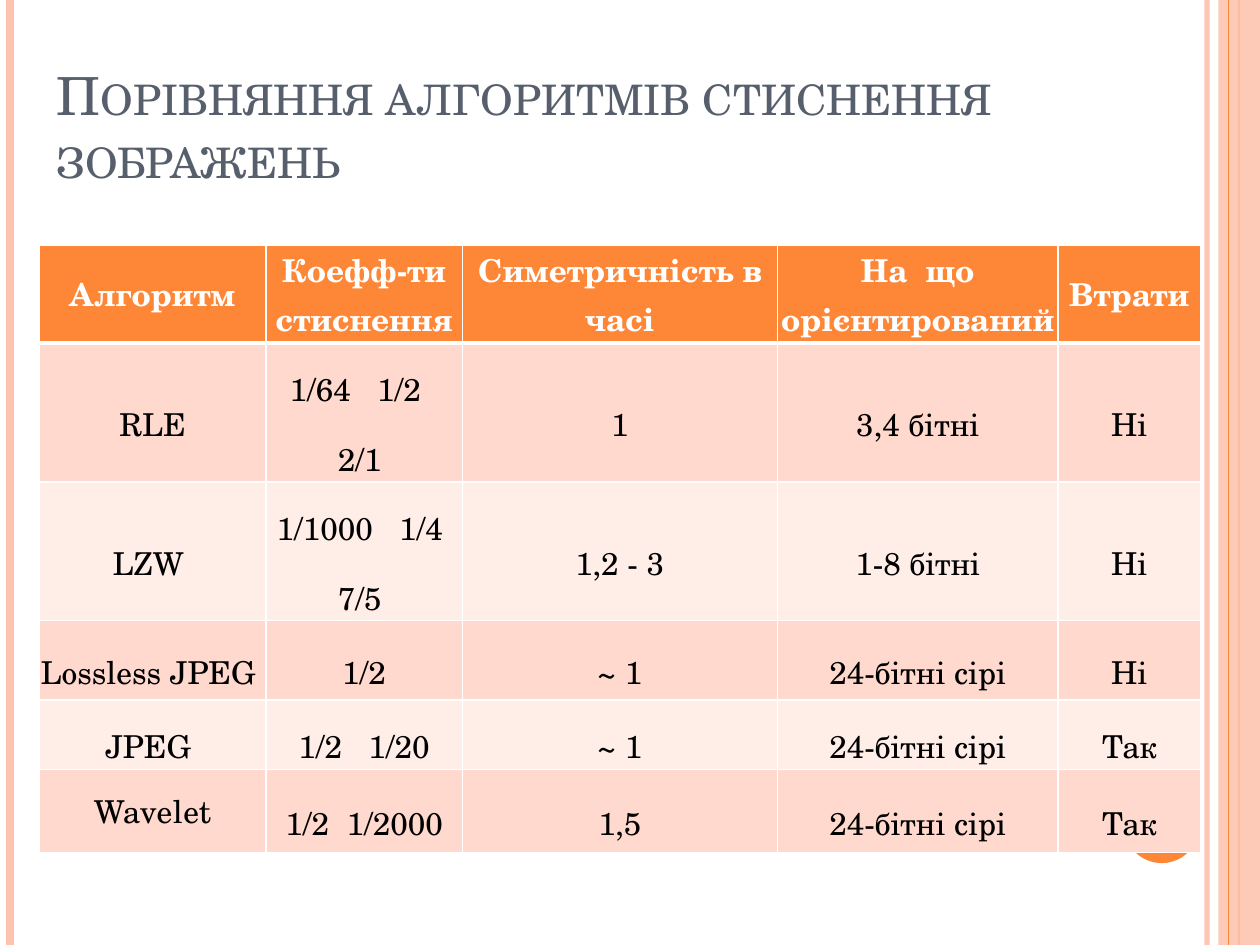
from dataclasses import dataclass

from lxml.etree import SubElement
from pptx import Presentation
from pptx.dml.color import RGBColor
from pptx.enum.shapes import MSO_CONNECTOR, MSO_SHAPE
from pptx.enum.text import MSO_ANCHOR, MSO_AUTO_SIZE, PP_ALIGN
from pptx.oxml.ns import qn
from pptx.util import Cm, Pt

FONT = "TeX Gyre Schola"
HUES = {
    "white": "FFFFFF", "black": "000000", "slate": "575F6D",
    "orange": "FE8637", "peach": "FEC3AE", "dark": "FFD9CE", "light": "FFEDE8",
}
WIDE, HIGH = 25.4, 19.05


@dataclass
class Stripe:
    x: float
    hue: str
    width: float
    alpha: int = 100


@dataclass
class Block:
    form: MSO_SHAPE
    box: tuple
    hue: str
    alpha: int = 100


STRIPES = [
    Stripe(24.33, "peach", 3, 93),
    Stripe(0.2, "peach", 4.5),
    Stripe(24.98, "orange", 1.5),
]
EDGE = Stripe(24.77, "orange", 0.75)
BAND = Block(MSO_SHAPE.RECTANGLE, (24.56, 0, 0.84, HIGH), "peach", 87)
DISC = Block(MSO_SHAPE.OVAL, (22.66, 15.88, 1.52, 1.52), "orange")

COLS = [4.57, 3.96, 6.35, 5.66, 2.87]
ROWS = [1.88, 1.5, 1.19, 1.6, 1.22, 1.68]
DATA = [
    ["Алгоритм", "Коефф-ти стиснення", "Симетричність в часі",
     "На  що орієнтирований", "Втрати"],
    ["RLE", "1/64   1/2   2/1 ", "1", "3,4 бітні", "Ні"],
    ["LZW ", "1/1000   1/4  7/5 ", "1,2 - 3", "1-8 бітні", "Ні"],
    ["Lossless JPEG ", "1/2", "~ 1", "24-бітні сірі", "Ні"],
    ["JPEG ", "1/2   1/20", "~ 1", "24-бітні сірі", "Так"],
    ["Wavelet", "1/2  1/2000", "1,5", "24-бітні сірі", "Так"],
]


def tint(fill, hue: str, alpha: int = 100) -> None:
    fill.solid()
    fill.fore_color.rgb = RGBColor.from_string(HUES[hue])
    if alpha < 100:
        node = fill.fore_color._xFill[0]
        SubElement(node, qn("a:alpha"), val=str(alpha * 1000))


def write(frame, text: str, *, size: float = 18, hue: str = "black",
          bold: bool = False, align=PP_ALIGN.CENTER, lead: float = 1,
          caps: bool = False, track: int = 0) -> None:
    para = frame.paragraphs[0]
    para.alignment = align
    para.line_spacing = lead
    run = para.add_run()
    run.text = text
    font = run.font
    font.name, font.size, font.bold = FONT, Pt(size), bold
    font.color.rgb = RGBColor.from_string(HUES[hue])
    props = run._r.get_or_add_rPr()
    if caps:
        props.set("cap", "small")
    if track:
        props.set("spc", str(track))


def rule(slide, item: Stripe):
    line = slide.shapes.add_connector(
        MSO_CONNECTOR.STRAIGHT, Cm(item.x), Cm(0), Cm(item.x), Cm(HIGH))
    line.line.width = Pt(item.width)
    tint(line.line.fill, item.hue, item.alpha)
    SubElement(line._element.spPr, qn("a:effectLst"))
    return line


def block(slide, item: Block):
    shape = slide.shapes.add_shape(item.form, *map(Cm, item.box))
    shape.shadow.inherit = False
    tint(shape.fill, item.hue, item.alpha)
    shape.line.fill.background()
    return shape


def border(cell, head: bool) -> None:
    props = cell._tc.get_or_add_tcPr()
    for side in "LRTB":
        width = Pt(3 if head and side == "B" else 1)
        line = SubElement(props, qn(f"a:ln{side}"), w=str(width))
        fill = SubElement(line, qn("a:solidFill"))
        SubElement(fill, qn("a:srgbClr"), val=HUES["white"])


def grid(slide) -> None:
    frame = slide.shapes.add_table(
        len(ROWS), len(COLS), Cm(0.79), Cm(4.95), Cm(sum(COLS)), Cm(10.95))
    table = frame.table
    for col, width in zip(table.columns, COLS):
        col.width = Cm(width)
    for r, (row, high, texts) in enumerate(zip(table.rows, ROWS, DATA)):
        row.height = Cm(high)
        head = r == 0
        for cell, text in zip(row.cells, texts):
            border(cell, head)
            tint(cell.fill, "orange" if head else "dark" if r % 2 else "light")
            cell.vertical_anchor = MSO_ANCHOR.MIDDLE
            cell.margin_left = cell.margin_right = 0
            cell.margin_top = cell.margin_bottom = 0
            last = text == "Wavelet"
            write(cell.text_frame, text, bold=head,
                  hue="white" if head else "black",
                  lead=1 if head or last else 1.5, track=30 if last else 0)
    frame.height = Cm(10.95)


def main() -> None:
    deck = Presentation()
    deck.slide_width, deck.slide_height = Cm(WIDE), Cm(HIGH)
    slide = deck.slides.add_slide(deck.slide_layouts[5])

    # Side stripes; the last one runs down the middle of the band
    lines = [rule(slide, item) for item in STRIPES]
    band = block(slide, BAND)
    lines[-1].begin_connect(band, 0)
    lines[-1].end_connect(band, 2)
    rule(slide, EDGE)
    block(slide, DISC)

    # Title
    title = slide.shapes.title
    title.left, title.top = Cm(0.89), Cm(0.76)
    title.width, title.height = Cm(23.8), Cm(3.18)
    frame = title.text_frame
    frame.word_wrap = True
    frame.auto_size = MSO_AUTO_SIZE.NONE
    frame.vertical_anchor = MSO_ANCHOR.BOTTOM
    write(frame, "Порівняння алгоритмів стиснення зображень",
          size=30, hue="slate", align=PP_ALIGN.LEFT, caps=True)

    # Comparison table
    grid(slide)
    deck.save("out.pptx")


if __name__ == "__main__":
    main()
